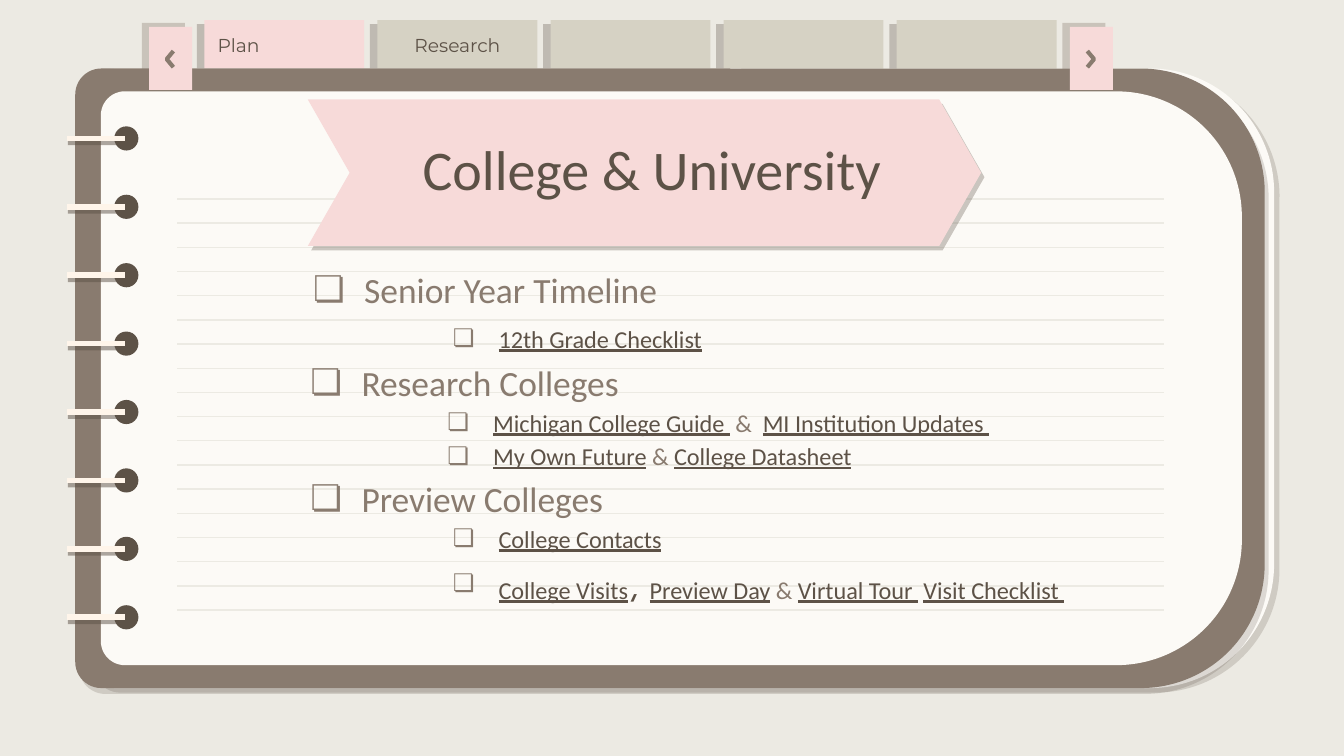
"""Builds a planner-style slide listing college and university resources."""
from lxml import etree
from pptx import Presentation
from pptx.dml.color import RGBColor
from pptx.enum import shapes, text
from pptx.oxml import ns
from pptx.util import Inches, Pt

WIDTH, HEIGHT = 10, 5.625
PAPER, SAND, PINK, KHAKI = "FCFAF6", "ECEAE3", "F7DAD9", "D6D2C4"
BROWN, DARK, CREAM = "897B6F", "5D5247", "FFF5EA"

TABS = [("Plan", "LEFT"), ("Research", "CENTER"), ("", "CENTER"), ("", "CENTER"), ("", "CENTER")]
# frame, corner rounding, fill, shadow
COVERS = [
    ((0.66, 0.51, 8.82, 4.61), 0.2, PAPER, (DARK, 20, 3.8, 40)),
    ((0.56, 0.51, 8.85, 4.61), 0.2, BROWN, (DARK, 20, 3.8, 56)),
    ((0.75, 0.68, 8.49, 4.27), 0.219, PAPER, None),
]
ARROWS = [(7.96, 8.09, 8.14), (1.11, 1.29, 1.24)]

HEADING = {"size": 19, "color": BROWN}
LINK = {"size": 13, "color": DARK, "underline": True}
PLAIN = {"size": 13, "color": BROWN}
COMMA = {"size": 21, "color": DARK, "font": "TeX Gyre Adventor"}
# level, left margin, hanging indent, space before, space after, runs
OUTLINE = [
    (1, 1.5, 0.38, 0, 0, [("Senior Year Timeline", HEADING)]),
    (3, 2.5, 0.34, 4.5, 1, [("12th Grade Checklist", LINK)]),
    (3, 1.48, 0.38, 0, 0, [("Research Colleges", HEADING)]),
    (4, 2.46, 0.34, 0, 0, [("Michigan College Guide ", LINK), (" &  ", PLAIN),
                           ("MI Institution Updates ", LINK)]),
    (4, 2.46, 0.34, 0, 0, [("My Own Future", LINK), (" & ", PLAIN), ("College Datasheet", LINK)]),
    (2, 1.48, 0.38, 0, 0, [("Preview Colleges", HEADING)]),
    (3, 2.5, 0.34, 0, 0, [("College Contacts", LINK)]),
    (3, 2.5, 0.34, 0, 0, [("College Visits", LINK), (", ", COMMA), ("Preview Day", LINK),
                          (" & ", PLAIN), ("Virtual Tour ", LINK), (" ", PLAIN),
                          ("Visit Checklist ", LINK)]),
]


def rgb(value):
    """Turn a hex string into a colour."""
    return RGBColor.from_string(value)


def add_effects(shape, shadow=None):
    """Replace the theme shadow with the given one, or with none."""
    effects = etree.SubElement(shape._element.spPr, ns.qn("a:effectLst"))
    if shadow:
        color, alpha, distance, angle = shadow
        outer = etree.SubElement(effects, ns.qn("a:outerShdw"), dist=str(Pt(distance)),
                                 dir=str(angle * 60000), algn="bl", rotWithShape="0")
        tint = etree.SubElement(outer, ns.qn("a:srgbClr"), val=color)
        etree.SubElement(tint, ns.qn("a:alpha"), val=str(alpha * 1000))


def add_block(page, kind, frame, fill, shadow=None, adjust=(), turned=False):
    """Add a borderless filled shape, optionally turned a quarter clockwise."""
    left, top, width, height = frame
    if turned:
        left, top = left + (width - height) / 2, top + (height - width) / 2
        width, height = height, width
    shape = page.shapes.add_shape(kind, *map(Inches, (left, top, width, height)))
    shape.rotation = 90 if turned else 0
    for index, value in enumerate(adjust):
        shape.adjustments[index] = value
    shape.fill.solid()
    shape.fill.fore_color.rgb = rgb(fill)
    shape.line.fill.background()
    add_effects(shape, shadow)
    return shape


def add_rule(page, left, right, y, color, weight, shadow=None):
    """Add a horizontal line."""
    rule = page.shapes.add_connector(shapes.MSO_CONNECTOR.STRAIGHT,
                                     *map(Inches, (left, y, right, y)))
    rule.line.color.rgb = rgb(color)
    rule.line.width = Pt(weight)
    add_effects(rule, shadow)


def add_span(para, words, size, color, font="Calibri", underline=False):
    """Add formatted text to a paragraph."""
    span = para.add_run()
    span.text = words
    span.font.size, span.font.name, span.font.underline = Pt(size), font, underline
    span.font.color.rgb = rgb(color)


def set_frame(box, frame, anchor, inset=0):
    """Place a text box and fix its margins and anchor."""
    box.left, box.top, box.width, box.height = map(Inches, frame)
    body = box.text_frame
    body.word_wrap, body.auto_size = True, text.MSO_AUTO_SIZE.NONE
    body.vertical_anchor = anchor
    body.margin_left = body.margin_right = Inches(0.1)
    body.margin_top = body.margin_bottom = Inches(inset)
    return body


def add_notebook(page):
    """Draw the tabs, covers, binding rings and ruled lines."""
    rect = shapes.MSO_SHAPE.RECTANGLE
    for column, (label, align) in enumerate(TABS):
        frame = (1.52 + 1.288 * column, 0.15, 1.19, 0.37)
        tab = add_block(page, rect, frame, KHAKI if column else PINK, (DARK, 31, 4.5, 152))
        if label:
            para = set_frame(tab, frame, text.MSO_ANCHOR.MIDDLE).paragraphs[0]
            para.alignment = text.PP_ALIGN[align]
            add_span(para, label, 10, DARK, font="Montserrat")
    for frame, corner, fill, shadow in COVERS:
        add_block(page, shapes.MSO_SHAPE.ROUND_2_SAME_RECTANGLE, frame, fill, shadow,
                  (corner, 0.042), turned=True)
    for row in range(8):
        y = 1.03 + 0.509 * row
        add_block(page, shapes.MSO_SHAPE.OVAL, (0.85, y - 0.09, 0.18, 0.18), DARK)
        add_rule(page, 0.5, 0.93, y, CREAM, 3, (DARK, 50, 2.2, 80))
    for row in range(18):
        add_rule(page, 1.32, 8.66, 1.48 + 0.18 * row, SAND, 0.75)


def add_arrows(page):
    """Draw the previous and next buttons."""
    for left, tail, tip in ARROWS:
        add_block(page, shapes.MSO_SHAPE.RECTANGLE, (left, 0.2, 0.32, 0.47), PINK,
                  (BROWN, 35, 4.5, 209))
        builder = page.shapes.build_freeform(Inches(tail), Inches(0.38))
        builder.add_line_segments([(Inches(tip), Inches(0.44)), (Inches(tail), Inches(0.5))],
                                  close=False)
        arrow = builder.convert_to_shape()
        arrow.fill.background()
        arrow.line.color.rgb = rgb(BROWN)
        arrow.line.width = Pt(2.25)
        add_effects(arrow)


def fill_outline(box):
    """Write the checklist into the body placeholder."""
    body = set_frame(box, (1.11, 1.95, 8.23, 1.81), text.MSO_ANCHOR.TOP)
    for index, (level, margin, hang, before, after, spans) in enumerate(OUTLINE):
        para = body.add_paragraph() if index else body.paragraphs[0]
        para.level, para.line_spacing = level, 1.15
        para.space_before, para.space_after = Pt(before), Pt(after)
        props = para._p.get_or_add_pPr()
        props.set("marL", str(Inches(margin)))
        props.set("indent", str(-Inches(hang)))
        bullet_color = etree.SubElement(props, ns.qn("a:buClr"))
        etree.SubElement(bullet_color, ns.qn("a:srgbClr"), val=BROWN)
        etree.SubElement(props, ns.qn("a:buChar"), char="❏")
        for words, style in spans:
            add_span(para, words, **style)


def main():
    """Build and save the deck."""
    deck = Presentation()
    deck.slide_width, deck.slide_height = Inches(WIDTH), Inches(HEIGHT)
    page = deck.slides.add_slide(deck.slide_layouts[1])
    page.background.fill.solid()
    page.background.fill.fore_color.rgb = rgb(SAND)
    title, outline = page.placeholders

    add_notebook(page)
    add_block(page, shapes.MSO_SHAPE.CHEVRON, (2.29, 0.74, 5.01, 1.09), PINK,
              (DARK, 31, 3, 53), (0.286,))
    add_arrows(page)

    fill_outline(outline)
    para = set_frame(title, (2.64, 0.74, 4.42, 0.86), text.MSO_ANCHOR.BOTTOM, 0.1).paragraphs[0]
    para.alignment = text.PP_ALIGN.CENTER
    add_span(para, "College & University", 30, DARK)
    for box in (outline, title):
        page.shapes._spTree.append(box._element)
    deck.save("out.pptx")


if __name__ == "__main__":
    main()
